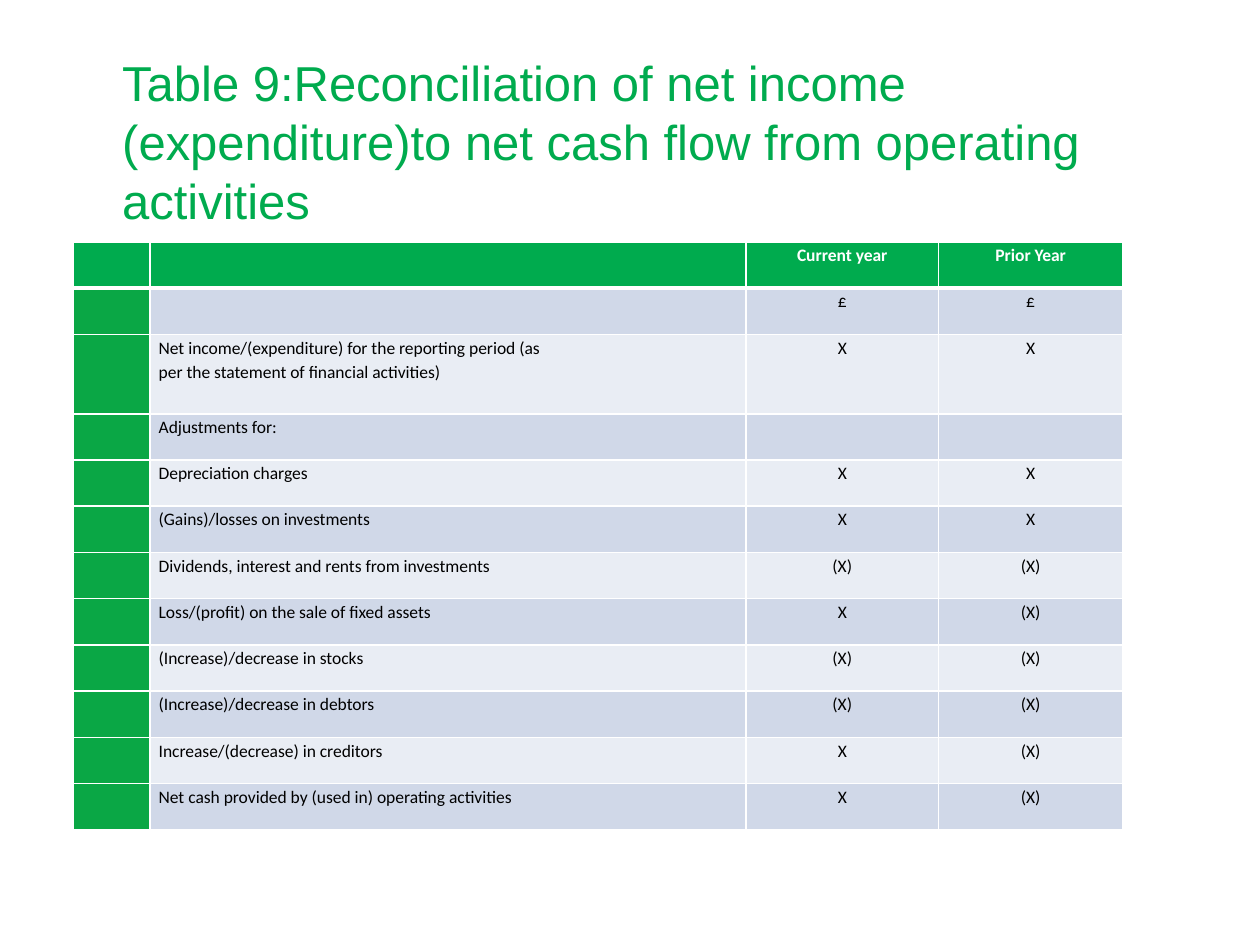
"""Build the slide that reconciles net income to operating cash flow."""
from lxml.etree import SubElement
from pptx import Presentation
from pptx.dml.color import RGBColor
from pptx.enum.text import MSO_ANCHOR as Anchor, MSO_AUTO_SIZE as Fit, PP_ALIGN as Align
from pptx.oxml.ns import qn
from pptx.util import Inches, Pt

GREEN = RGBColor(0x00, 0xAB, 0x4E)
LEAF = RGBColor(0x0A, 0xA7, 0x45)
BLUE = RGBColor(0xD0, 0xD8, 0xE8)
PALE = RGBColor(0xE9, 0xED, 0xF4)
WHITE = RGBColor(0xFF, 0xFF, 0xFF)
BLACK = RGBColor(0x00, 0x00, 0x00)

TITLE = ("Table 9:Reconciliation of net income (expenditure)to net cash flow "
         "from operating activities")
ROWS = [
    ("", "Current year", "Prior Year"),
    ("", "£", "£"),
    ("Net income/(expenditure) for the reporting period (as\n"
     "per the statement of financial activities)", "X", "X"),
    ("Adjustments for:", "", ""),
    ("Depreciation charges", "X", "X"),
    ("(Gains)/losses on investments", "X", "X"),
    ("Dividends, interest and rents from investments", "(X)", "(X)"),
    ("Loss/(profit) on the sale of fixed assets", "X", "(X)"),
    ("(Increase)/decrease in stocks", "(X)", "(X)"),
    ("(Increase)/decrease in debtors", "(X)", "(X)"),
    ("Increase/(decrease) in creditors", "X", "(X)"),
    ("Net cash provided by (used in) operating activities", "X", "(X)"),
]
WIDTHS = [0.61, 4.73, 1.53, 1.46]
HEIGHT, TALL, TALL_ROW = 4.67, 0.63, 2


def write(frame, text, size=10, font="Calibri", color=BLACK, bold=False,
          align=Align.LEFT, space=None):
    for i, line in enumerate(text.split("\n")):
        para = frame.paragraphs[0] if i == 0 else frame.add_paragraph()
        para.alignment = align
        para.line_spacing = space
        run = para.add_run()
        run.text = line
        run.font.size, run.font.name = Pt(size), font
        run.font.color.rgb, run.font.bold = color, bold


def border(cell, **sides):
    props = cell._tc.get_or_add_tcPr()
    for side in "LRTB":
        line = SubElement(props, qn(f"a:ln{side}"), w=str(Pt(sides.get(side, 1))))
        fill = SubElement(line, qn("a:solidFill"))
        SubElement(fill, qn("a:srgbClr"), val=str(WHITE))


def add_title(slide):
    title = slide.shapes.title
    title.left, title.top = Inches(0.87), Inches(0.31)
    title.width, title.height = Inches(9), Inches(1.62)
    frame = title.text_frame
    frame.word_wrap, frame.auto_size = True, Fit.NONE
    frame.vertical_anchor = Anchor.MIDDLE
    write(frame, TITLE, size=28, font="Arial", color=GREEN)


def add_grid(slide):
    grid = slide.shapes.add_table(
        len(ROWS), len(WIDTHS), Inches(0.58), Inches(1.92),
        Inches(sum(WIDTHS)), Inches(HEIGHT)).table
    for col, width in zip(grid.columns, WIDTHS):
        col.width = Inches(width)
    short = (HEIGHT - TALL) / (len(ROWS) - 1)
    for r, row in enumerate(ROWS):
        grid.rows[r].height = Inches(TALL if r == TALL_ROW else short)
        head = r == 0
        band = GREEN if head else BLUE if r % 2 else PALE
        for c, text in enumerate(("", *row)):
            cell = grid.cell(r, c)
            cell.margin_left = cell.margin_right = Inches(0.07)
            cell.margin_top = cell.margin_bottom = 0
            border(cell, B=3 if head else 1, T=3 if r == 1 else 1)
            cell.fill.solid()
            cell.fill.fore_color.rgb = LEAF if c == 0 and not head else band
            if text:
                write(cell.text_frame, text, color=WHITE if head else BLACK,
                      bold=head, space=1.15,
                      align=Align.CENTER if c > 1 else Align.LEFT)


def main():
    deck = Presentation()
    deck.slide_width, deck.slide_height = Inches(10), Inches(7.5)
    slide = deck.slides.add_slide(deck.slide_layouts[5])
    add_grid(slide)
    add_title(slide)
    deck.save("out.pptx")


if __name__ == "__main__":
    main()
